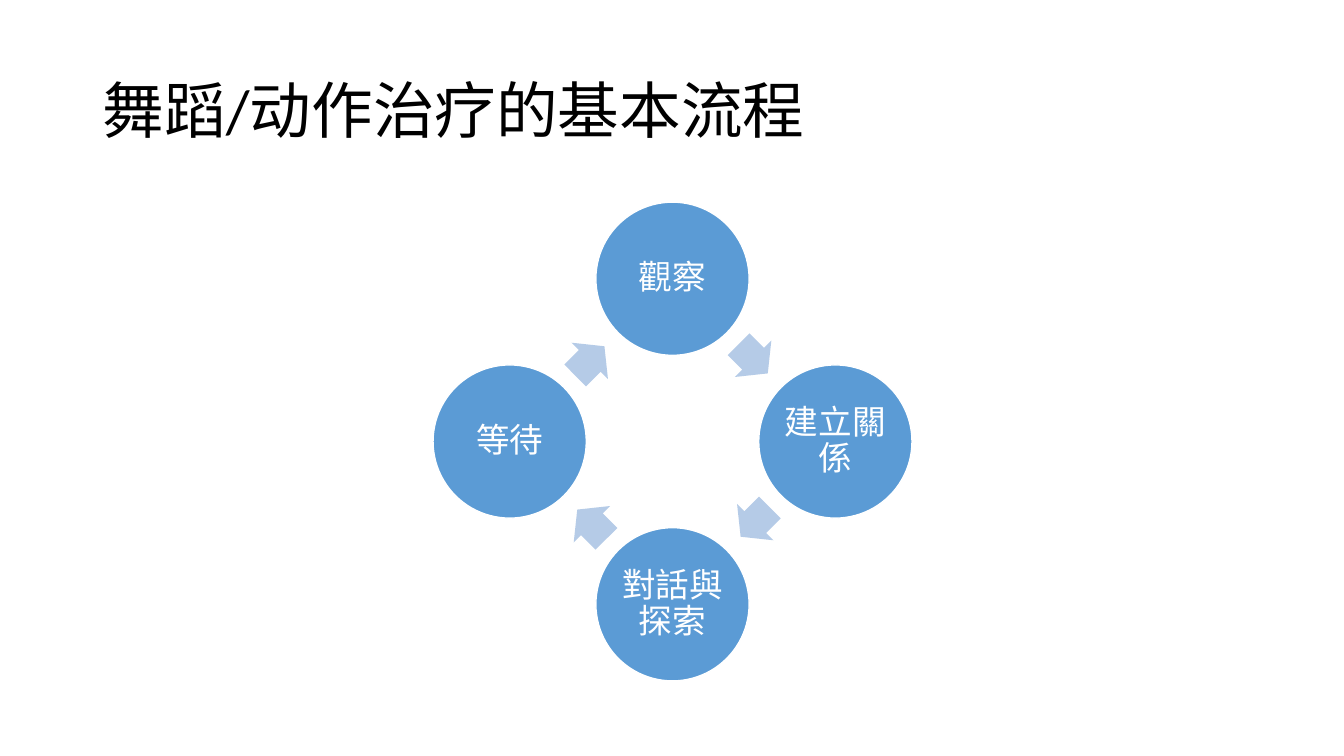
from math import cos, radians, sin

from pptx import Presentation
from pptx.dml.color import RGBColor
from pptx.enum.shapes import MSO_SHAPE
from pptx.enum.text import MSO_ANCHOR, PP_ALIGN
from pptx.util import Inches, Pt

COLORS = {"text": "000000", "circle": "5B9BD5", "white": "FFFFFF", "arrow": "B5CBE7"}
FONT = "Calibri"
STEPS = ["觀察", "建立關係", "對話與探索", "等待"]

# Cycle geometry in inches
CENTER = (6.67, 4.38)
RADIUS = 1.615
DIAMETER = 1.52
ARROW_SIZE = (0.41, 0.51)
ARROW_OFFSET = (0.8, -0.82)


def color(name):
    return RGBColor.from_string(COLORS[name])


def rotate(offset, degrees):
    """Turn an offset clockwise around the cycle and return the slide point."""
    x, y = offset
    c, s = cos(radians(degrees)), sin(radians(degrees))
    return CENTER[0] + x * c - y * s, CENTER[1] + x * s + y * c


def write(tf, text, size, color_name, align):
    tf.word_wrap = True
    tf.vertical_anchor = MSO_ANCHOR.MIDDLE
    p = tf.paragraphs[0]
    p.alignment = align
    p.line_spacing = 0.9
    r = p.add_run()
    r.text = text
    r.font.size = Pt(size)
    r.font.name = FONT
    r.font.color.rgb = color(color_name)


def add_title(s, text):
    sp = s.shapes.add_textbox(Inches(0.92), Inches(0.4), Inches(11.5), Inches(1.45))
    write(sp.text_frame, text, 44, "text", PP_ALIGN.LEFT)


def add_centered(s, preset, point, size, fill):
    (x, y), (w, h) = point, size
    sp = s.shapes.add_shape(preset, Inches(x - w / 2), Inches(y - h / 2), Inches(w), Inches(h))
    sp.shadow.inherit = False
    sp.fill.solid()
    sp.fill.fore_color.rgb = color(fill)
    return sp


def add_step(s, text, point):
    sp = add_centered(s, MSO_SHAPE.OVAL, point, (DIAMETER, DIAMETER), "circle")
    sp.line.color.rgb = color("white")
    sp.line.width = Pt(1)
    tf = sp.text_frame
    tf.margin_left = tf.margin_right = tf.margin_top = tf.margin_bottom = Inches(0.03)
    write(tf, text, 24, "white", PP_ALIGN.CENTER)


def add_arrow(s, point, rotation):
    sp = add_centered(s, MSO_SHAPE.RIGHT_ARROW, point, ARROW_SIZE, "arrow")
    sp.line.fill.background()
    sp.adjustments[0] = 0.6
    sp.adjustments[1] = 0.5
    sp.rotation = rotation


def main():
    prs = Presentation()
    prs.slide_width, prs.slide_height = Inches(13.33), Inches(7.5)
    s = prs.slides.add_slide(prs.slide_layouts[6])

    add_title(s, "舞蹈/动作治疗的基本流程")

    # Cycle: each step is followed by an arrow to the next
    for i, step in enumerate(STEPS):
        turn = i * 360 / len(STEPS)
        add_step(s, step, rotate((0, -RADIUS), turn))
        add_arrow(s, rotate(ARROW_OFFSET, turn), 45 + turn)

    prs.save("out.pptx")


if __name__ == "__main__":
    main()
